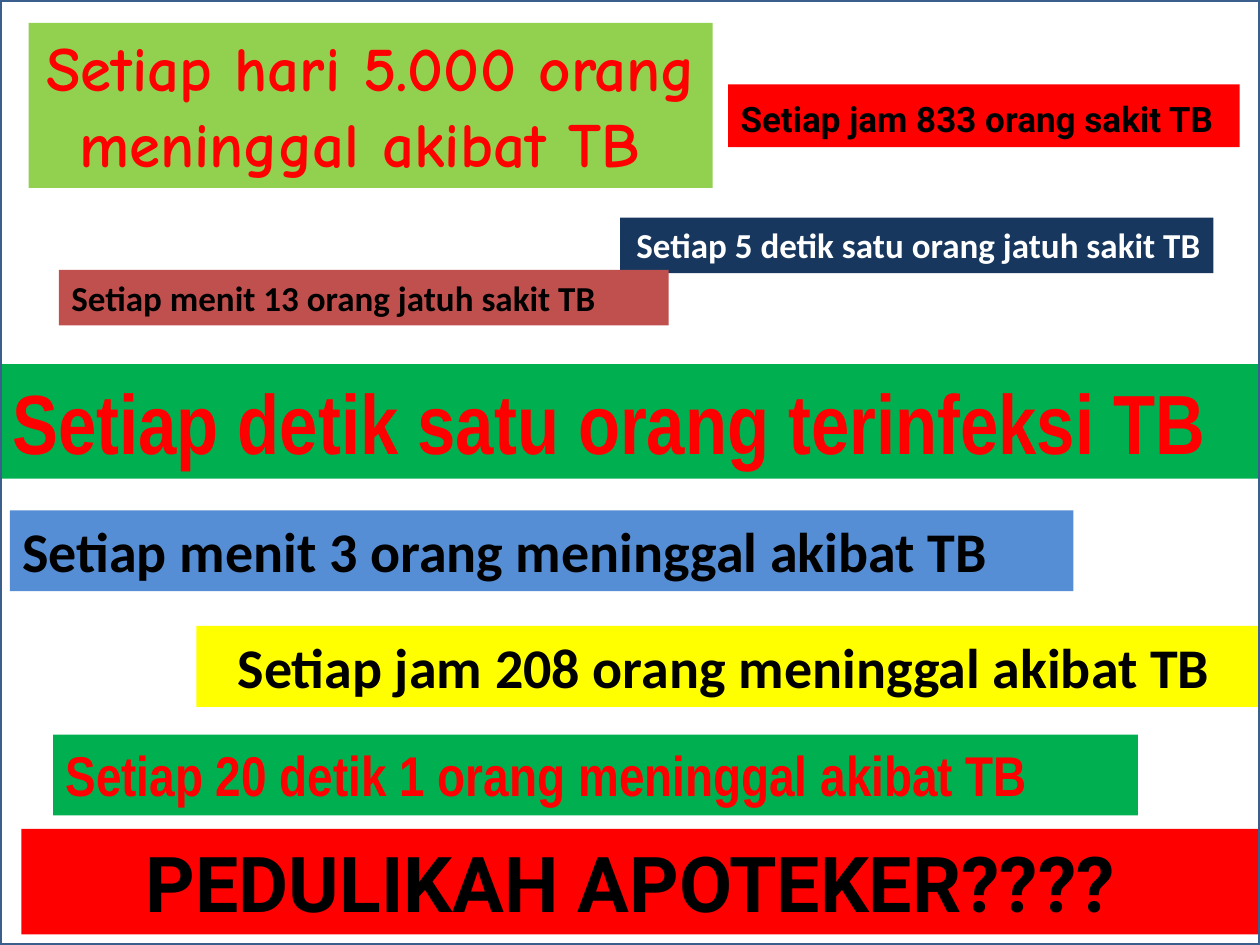
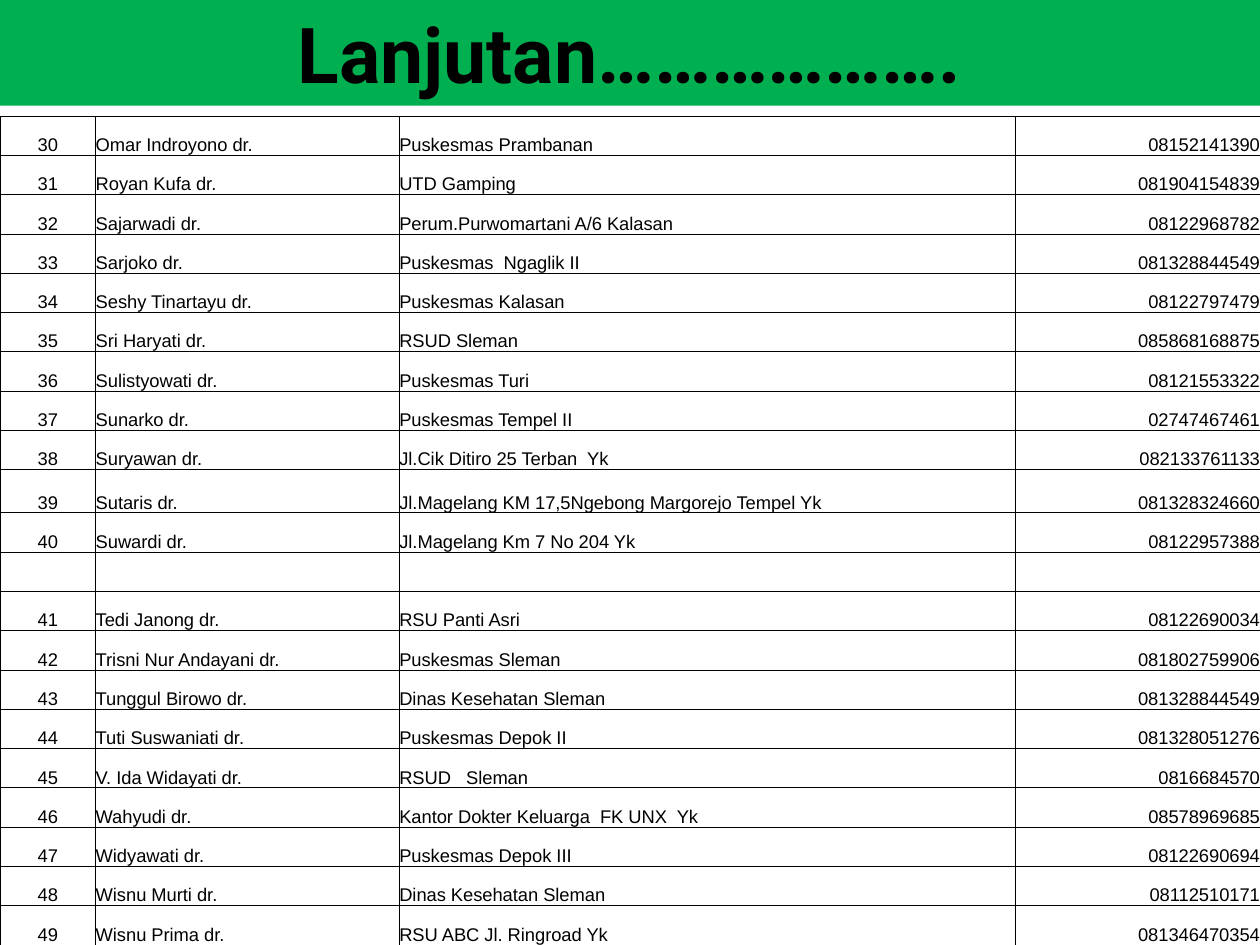
from lxml.etree import SubElement
from pptx import Presentation
from pptx.dml.color import RGBColor
from pptx.enum.shapes import MSO_SHAPE
from pptx.enum.text import MSO_ANCHOR, PP_ALIGN
from pptx.oxml.ns import qn
from pptx.util import Cm, Pt

SLIDE_WIDTH, SLIDE_HEIGHT = 25.4, 19.05
BLACK = RGBColor(0x00, 0x00, 0x00)
WHITE = RGBColor(0xFF, 0xFF, 0xFF)
RED = RGBColor(0xFF, 0x00, 0x00)
GREEN = RGBColor(0x00, 0xB0, 0x50)
LIME = RGBColor(0x92, 0xD0, 0x50)
YELLOW = RGBColor(0xFF, 0xFF, 0x00)
BLUE = RGBColor(0x55, 0x8E, 0xD5)
NAVY = RGBColor(0x17, 0x37, 0x5E)
BRICK = RGBColor(0xC0, 0x50, 0x4D)
FRAME_BLUE = RGBColor(0x3A, 0x5F, 0x8C)
LEFT, CENTER, RIGHT = PP_ALIGN.LEFT, PP_ALIGN.CENTER, PP_ALIGN.RIGHT
NARROW, ROBOTO, CALIBRI, COMIC = "Arial Narrow", "Roboto", "Calibri", "Comic Neue"

FACT_BANDS = [
    ((0, 7.34, 25.4, 2.31), GREEN, LEFT, NARROW, RED,
     [("Setiap detik satu orang terinfeksi TB", 48)]),
    ((14.68, 1.7, 10.31, 1.27), RED, LEFT, ROBOTO, BLACK,
     [("Setiap jam 833 orang sakit TB", 20), (" ", 24)]),
    ((12.5, 4.39, 11.96, 1.12), NAVY, RIGHT, CALIBRI, WHITE,
     [("Setiap 5 detik satu orang jatuh sakit TB", 20), (" ", 18)]),
    ((0.58, 0.46, 13.79, 3.33), LIME, CENTER, COMIC, RED,
     [("Setiap hari 5.000 orang meninggal akibat TB ", 36)]),
    ((3.96, 12.62, 21.44, 1.63), YELLOW, CENTER, CALIBRI, BLACK,
     [("Setiap jam 208 orang meninggal akibat TB", 32), (" ", 20)]),
    ((0.2, 10.29, 21.44, 1.63), BLUE, LEFT, CALIBRI, BLACK,
     [("Setiap menit 3 orang meninggal akibat TB", 32), (" ", 18)]),
    ((1.07, 14.81, 21.87, 1.63), GREEN, LEFT, NARROW, RED,
     [("Setiap 20 detik 1 orang meninggal akibat TB", 32), (" ", 24)]),
    ((1.19, 5.44, 12.29, 1.12), BRICK, LEFT, CALIBRI, BLACK,
     [("Setiap menit 13 orang jatuh sakit TB", 20)]),
    ((0.43, 16.71, 24.97, 2.13), RED, CENTER, ROBOTO, BLACK,
     [("PEDULIKAH APOTEKER???? ", 44)]),
]

DOCTORS = [
    ("30", "Omar Indroyono dr.", "Puskesmas Prambanan", "08152141390"),
    ("31", "Royan Kufa dr.", "UTD Gamping", "081904154839"),
    ("32", "Sajarwadi dr.", "Perum.Purwomartani A/6 Kalasan", "08122968782"),
    ("33", "Sarjoko dr.", "Puskesmas  Ngaglik II", "081328844549"),
    ("34", "Seshy Tinartayu dr.", "Puskesmas Kalasan", "08122797479"),
    ("35", "Sri Haryati dr.", "RSUD Sleman", "085868168875"),
    ("36", "Sulistyowati dr.", "Puskesmas Turi", "08121553322"),
    ("37", "Sunarko dr.", "Puskesmas Tempel II", "02747467461"),
    ("38", "Suryawan dr.", "Jl.Cik Ditiro 25 Terban  Yk", "082133761133"),
    ("39", "Sutaris dr.", "Jl.Magelang KM 17,5Ngebong Margorejo Tempel Yk", "081328324660"),
    ("40", "Suwardi dr.", "Jl.Magelang Km 7 No 204 Yk", "08122957388"),
    ("", "", "", ""),
    ("41", "Tedi Janong dr.", "RSU Panti Asri", "08122690034"),
    ("42", "Trisni Nur Andayani dr.", "Puskesmas Sleman", "081802759906"),
    ("43", "Tunggul Birowo dr.", "Dinas Kesehatan Sleman", "081328844549"),
    ("44", "Tuti Suswaniati dr.", "Puskesmas Depok II", "081328051276"),
    ("45", "V. Ida Widayati dr.", "RSUD   Sleman", "0816684570"),
    ("46", "Wahyudi dr.", "Kantor Dokter Keluarga  FK UNX  Yk", "08578969685"),
    ("47", "Widyawati dr.", "Puskesmas Depok III", "08122690694"),
    ("48", "Wisnu Murti dr.", "Dinas Kesehatan Sleman", "08112510171"),
    ("49", "Wisnu Prima dr.", "RSU ABC Jl. Ringroad Yk", "081346470354"),
]
COLUMNS = [(1.93, CENTER), (6.12, LEFT), (12.42, LEFT), (4.93, RIGHT)]
TALL_ROW, TALL_ROW_HEIGHT = 9, 0.87


def add_run(paragraph, text, size, font, color, bold=False):
    """Append one formatted run to a paragraph."""
    run = paragraph.add_run()
    run.text = text
    run.font.size = Pt(size)
    run.font.name = font
    run.font.bold = bold
    run.font.color.rgb = color


def add_rectangle(slide, box):
    """Add a rectangle without shadow at a box in centimetres."""
    shape = slide.shapes.add_shape(MSO_SHAPE.RECTANGLE, *map(Cm, box))
    shape.shadow.inherit = False
    return shape


def add_band(slide, box, fill, align, font, color, runs):
    """Add a filled band with one bold paragraph."""
    shape = add_rectangle(slide, box)
    shape.fill.solid()
    shape.fill.fore_color.rgb = fill
    shape.line.fill.background()
    frame = shape.text_frame
    frame.word_wrap = True
    frame.vertical_anchor = MSO_ANCHOR.TOP
    paragraph = frame.paragraphs[0]
    paragraph.alignment = align
    for text, size in runs:
        add_run(paragraph, text, size, font, color, bold=True)


def add_frame(slide, box):
    """Outline a box without filling it."""
    shape = add_rectangle(slide, box)
    shape.fill.background()
    shape.line.color.rgb = FRAME_BLUE
    shape.line.width = Pt(2)


def add_borders(cell):
    """Draw thin black lines on all four sides of a cell."""
    properties = cell._tc.get_or_add_tcPr()
    for side in ("a:lnL", "a:lnR", "a:lnT", "a:lnB"):
        line = SubElement(properties, qn(side), w=str(Pt(0.5)))
        fill = SubElement(line, qn("a:solidFill"))
        SubElement(fill, qn("a:srgbClr"), val=str(BLACK))


def fill_cell(cell, text, align):
    """Format one table cell and write its text."""
    add_borders(cell)
    cell.fill.solid()
    cell.fill.fore_color.rgb = WHITE
    cell.margin_left = cell.margin_right = cell.margin_top = cell.margin_bottom = 0
    cell.vertical_anchor = MSO_ANCHOR.BOTTOM
    paragraph = cell.text_frame.paragraphs[0]
    paragraph.alignment = align
    if text:
        add_run(paragraph, text, 10.5, "Arial", BLACK)


def add_doctor_table(slide, box):
    """Fill a box with the table of doctors."""
    table = slide.shapes.add_table(len(DOCTORS), len(COLUMNS), *map(Cm, box)).table
    table.first_row = table.horz_banding = False
    for column, (width, _) in zip(table.columns, COLUMNS):
        column.width = Cm(width)
    row_height = (box[3] - TALL_ROW_HEIGHT) / (len(DOCTORS) - 1)
    for index, (row, doctor) in enumerate(zip(table.rows, DOCTORS)):
        row.height = Cm(TALL_ROW_HEIGHT if index == TALL_ROW else row_height)
        for cell, text, (_, align) in zip(row.cells, doctor, COLUMNS):
            fill_cell(cell, text, align)


def build_facts_slide(slide):
    """Place the TB fact bands inside a slide frame."""
    for band in FACT_BANDS:
        add_band(slide, *band)
    add_frame(slide, (0, 0, SLIDE_WIDTH, SLIDE_HEIGHT))


def build_doctors_slide(slide):
    """Place the table of doctors under its title band."""
    top = 2.34
    add_doctor_table(slide, (0, top, SLIDE_WIDTH, SLIDE_HEIGHT - top))
    add_band(slide, (0, 0, SLIDE_WIDTH, 2.13), GREEN, CENTER, ROBOTO, BLACK,
             [("Lanjutan……………….", 44)])


def main():
    """Build and save the presentation."""
    presentation = Presentation()
    presentation.slide_width = Cm(SLIDE_WIDTH)
    presentation.slide_height = Cm(SLIDE_HEIGHT)
    for build in (build_facts_slide, build_doctors_slide):
        build(presentation.slides.add_slide(presentation.slide_layouts[6]))
    presentation.save("out.pptx")


if __name__ == "__main__":
    main()
